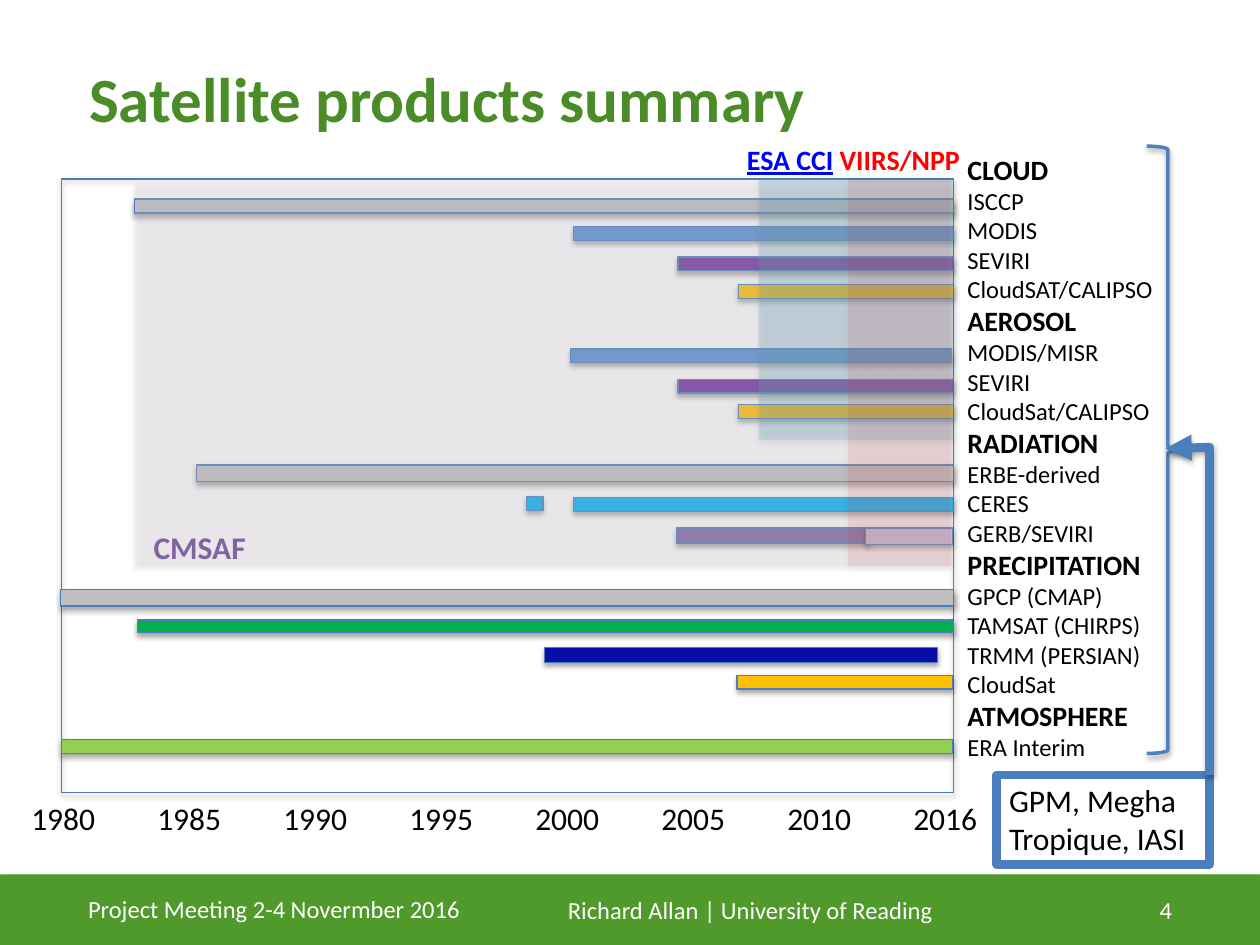
from dataclasses import dataclass
from typing import Optional

from lxml.etree import SubElement
from pptx import Presentation
from pptx.dml.color import RGBColor
from pptx.enum.shapes import MSO_SHAPE as Preset
from pptx.enum.text import MSO_ANCHOR as Anchor, PP_ALIGN as Align
from pptx.oxml.ns import qn
from pptx.util import Inches, Pt

WHITE = RGBColor(0xFF, 0xFF, 0xFF)
BLACK = RGBColor(0x00, 0x00, 0x00)
FOOTER_GREEN = RGBColor(0x50, 0x99, 0x2B)
TITLE_GREEN = RGBColor(0x49, 0x8C, 0x28)
OUTLINE = RGBColor(0x4B, 0x7E, 0xBC)
BRACE_BLUE = RGBColor(0x4F, 0x81, 0xBD)
GREY = RGBColor(0xBF, 0xBF, 0xBF)
BLUE = RGBColor(0x55, 0x8E, 0xD5)
PURPLE = RGBColor(0x70, 0x30, 0xA0)
GOLD = RGBColor(0xFF, 0xC0, 0x00)
CYAN = RGBColor(0x00, 0xB0, 0xF0)
MAUVE = RGBColor(0x80, 0x64, 0xA2)
PALE_MAUVE = RGBColor(0xCC, 0xC1, 0xDA)
GREEN = RGBColor(0x00, 0xB0, 0x50)
NAVY = RGBColor(0x08, 0x0C, 0xA8)
LIME = RGBColor(0x92, 0xD0, 0x50)
TEAL = RGBColor(0x4B, 0xAC, 0xC6)
RED = RGBColor(0xFF, 0x00, 0x00)
LAVENDER = RGBColor(0xE6, 0xE0, 0xEC)
LINK_BLUE = RGBColor(0x00, 0x00, 0xFF)

RECORD_END = 7.57


@dataclass(frozen=True)
class Box:
    left: float
    top: float
    width: float
    height: float

    def lengths(self) -> list:
        return [Inches(v) for v in (self.left, self.top, self.width, self.height)]


@dataclass(frozen=True)
class Bar:
    start: float
    top: float
    color: RGBColor
    end: float = RECORD_END
    height: float = 0.11


@dataclass(frozen=True)
class Run:
    text: str
    size: float
    color: RGBColor = BLACK
    bold: bool = False
    underline: bool = False


@dataclass(frozen=True)
class Label:
    box: Box
    paragraphs: list
    align: Align = Align.LEFT
    anchor: Anchor = Anchor.TOP


@dataclass(frozen=True)
class Product:
    group: str
    names: list


BARS = [
    Bar(1.07, 1.58, GREY),
    Bar(4.55, 1.80, BLUE),
    Bar(5.38, 2.04, PURPLE),
    Bar(5.86, 2.26, GOLD),
    Bar(4.53, 2.77, BLUE, 7.55),
    Bar(5.38, 3.01, PURPLE),
    Bar(5.86, 3.21, GOLD),
    Bar(1.56, 3.69, GREY, height=0.13),
    Bar(4.18, 3.94, CYAN, 4.31),
    Bar(4.55, 3.95, CYAN),
    Bar(5.37, 4.19, MAUVE, 6.9, 0.12),
    Bar(6.87, 4.19, PALE_MAUVE, 7.56, 0.13),
    Bar(0.48, 4.68, GREY, height=0.13),
    Bar(1.09, 4.92, GREEN, height=0.10),
    Bar(4.32, 5.14, NAVY, 7.44, 0.12),
    Bar(5.85, 5.36, GOLD, 7.56),
    Bar(0.49, 5.87, LIME, 7.56),
]

PRODUCTS = [
    Product("CLOUD", ["ISCCP", "MODIS", "SEVIRI", "CloudSAT/CALIPSO"]),
    Product("AEROSOL", ["MODIS/MISR", "SEVIRI", "CloudSat/CALIPSO"]),
    Product("RADIATION", ["ERBE-derived", "CERES", "GERB/SEVIRI"]),
    Product("PRECIPITATION", ["GPCP (CMAP)", "TAMSAT (CHIRPS)", "TRMM (PERSIAN)", "CloudSat"]),
    Product("ATMOSPHERE", ["ERA Interim"]),
]

YEARS = [*range(1980, 2011, 5), 2016]


def add_shadow(shape) -> None:
    shape.shadow.inherit = False
    effects = shape._element.spPr.find(qn("a:effectLst"))
    shadow = SubElement(effects, qn("a:outerShdw"), blurRad=str(Pt(3.1)), dist=str(Pt(1.8)),
                        dir="5400000", rotWithShape="0")
    color = SubElement(shadow, qn("a:srgbClr"), val="000000")
    SubElement(color, qn("a:alpha"), val="35000")


def style_shape(shape, fill: Optional[RGBColor], line: Optional[RGBColor],
                width: float, shadow: bool = True) -> None:
    if fill is None:
        shape.fill.background()
    else:
        shape.fill.solid()
        shape.fill.fore_color.rgb = fill
    if line is None:
        shape.line.fill.background()
    else:
        shape.line.color.rgb = line
        shape.line.width = Pt(width)
    if shadow:
        add_shadow(shape)
    else:
        shape.shadow.inherit = False


def add_preset(slide, box: Box, fill: Optional[RGBColor] = None, line: Optional[RGBColor] = None,
               width: float = 0.75, preset: Preset = Preset.RECTANGLE, shadow: bool = True):
    shape = slide.shapes.add_shape(preset, *box.lengths())
    style_shape(shape, fill, line, width, shadow)
    return shape


def add_band(slide, box: Box, color: RGBColor, opacity: int) -> None:
    shape = add_preset(slide, box, color)
    fill_color = shape._element.spPr.find(qn("a:solidFill"))[0]
    SubElement(fill_color, qn("a:alpha"), val=str(opacity * 1000))


def write_text(shape, label: Label) -> None:
    frame = shape.text_frame
    frame.word_wrap = True
    frame.vertical_anchor = label.anchor
    for index, runs in enumerate(label.paragraphs):
        paragraph = frame.add_paragraph() if index else frame.paragraphs[0]
        paragraph.alignment = label.align
        for item in runs:
            run = paragraph.add_run()
            run.text = item.text
            formats = {"name": "Calibri", "size": Pt(item.size),
                       "bold": item.bold, "underline": item.underline}
            for name, value in formats.items():
                setattr(run.font, name, value)
            run.font.color.rgb = item.color


def add_label(slide, label: Label) -> None:
    write_text(slide.shapes.add_textbox(*label.box.lengths()), label)


def add_elbow_arrow(slide) -> None:
    builder = slide.shapes.build_freeform(Inches(9.6), Inches(6.15))
    builder.add_line_segments([(Inches(9.6), Inches(3.55)), (Inches(9.25), Inches(3.56))], close=False)
    arrow = builder.convert_to_shape()
    style_shape(arrow, None, OUTLINE, 5)
    SubElement(arrow.line._get_or_add_ln(), qn("a:tailEnd"), type="triangle")


def main() -> None:
    presentation = Presentation()
    presentation.slide_width, presentation.slide_height = Inches(10), Inches(7.5)
    slide = presentation.slides.add_slide(presentation.slide_layouts[6])

    add_preset(slide, Box(0, 6.94, 10, 0.56), FOOTER_GREEN)
    add_preset(slide, Box(0.49, 1.42, 7.08, 4.87), line=OUTLINE)
    for bar in BARS:
        add_preset(slide, Box(bar.start, bar.top, bar.end - bar.start, bar.height), bar.color, OUTLINE)

    missions = Label(Box(7.91, 6.15, 1.69, 0.71), [[Run("GPM, Megha Tropique, IASI", 18)]])
    write_text(add_preset(slide, missions.box, line=OUTLINE, width=5, shadow=False), missions)
    add_preset(slide, Box(9.1, 1.16, 0.34, 4.82), line=BRACE_BLUE, width=2, preset=Preset.RIGHT_BRACE)
    add_elbow_arrow(slide)

    add_band(slide, Box(6.02, 1.42, 1.55, 2.07), TEAL, 25)
    add_band(slide, Box(6.73, 1.42, 0.82, 3.07), RED, 10)
    add_band(slide, Box(1.07, 1.45, 6.49, 3.04), LAVENDER, 25)

    product_lines = []
    for product in PRODUCTS:
        product_lines.append([Run(product.group, 16, bold=True)])
        product_lines.extend([Run(name, 14)] for name in product.names)
    labels = [
        Label(Box(0.61, 0.42, 6.43, 0.7), [[Run("Satellite products summary", 36, TITLE_GREEN, True)]],
              anchor=Anchor.MIDDLE),
        Label(Box(0.15, 6.29, 7.93, 0.4), [[Run("\t".join(map(str, YEARS)), 18)]]),
        Label(Box(7.58, 1.16, 1.71, 4.98), product_lines),
        Label(Box(5.83, 1.08, 2.12, 0.37), [[Run("ESA CCI", 16, LINK_BLUE, True, True),
                                             Run(" ", 16, TEAL, True),
                                             Run("VIIRS/NPP", 16, RED, True)]]),
        Label(Box(1.12, 4.14, 1.42, 0.4), [[Run("CMSAF", 18, MAUVE, True)]]),
        Label(Box(0.6, 7.05, 3.21, 0.4), [[Run("Project Meeting 2-4 Novermber 2016", 14, WHITE)]]),
        Label(Box(4.08, 7.02, 3.75, 0.4), [[Run("Richard Allan | University of Reading", 14, WHITE)]],
              Align.CENTER, Anchor.MIDDLE),
        Label(Box(8.45, 7.02, 0.95, 0.4), [[Run("4", 14, WHITE)]], Align.RIGHT, Anchor.MIDDLE),
    ]
    for label in labels:
        add_label(slide, label)

    presentation.save("out.pptx")


if __name__ == "__main__":
    main()
